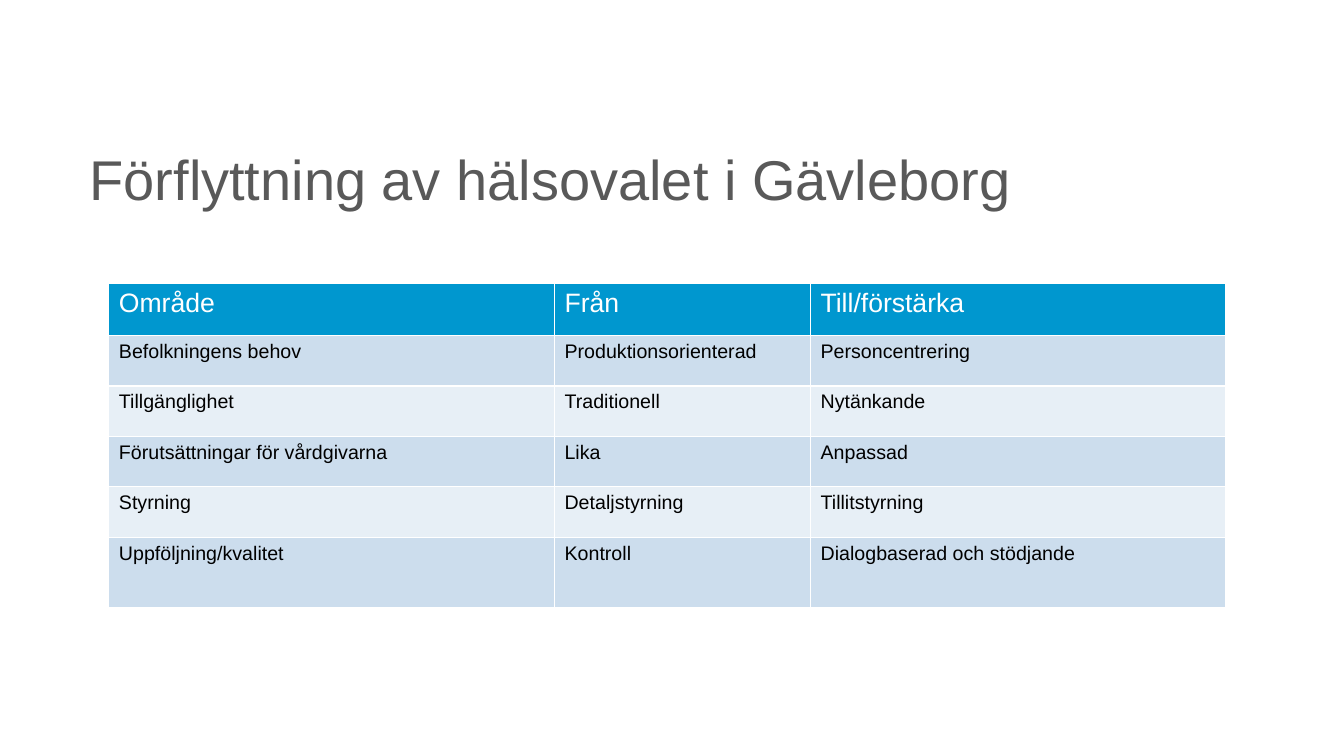
"""Build a slide with a title and a table of shifts in the Gävleborg health choice system."""
import pptx
import pptx.dml.color
import pptx.enum.text
import pptx.oxml
import pptx.oxml.ns
import pptx.util

FONT = "Arial"
WHITE, BLACK, GREY = "FFFFFF", "000000", "595959"
HEADER_FILL = "0097CF"
BAND_FILLS = ("CCDDED", "E7EFF6")
COLUMN_WIDTHS = (4.42, 2.54, 4.12)
ROW_HEIGHTS = (0.52, 0.5, 0.5, 0.5, 0.5, 0.7)
ROWS = (
    ("Område", "Från", "Till/förstärka"),
    ("Befolkningens behov", "Produktionsorienterad", "Personcentrering"),
    ("Tillgänglighet", "Traditionell", "Nytänkande"),
    ("Förutsättningar för vårdgivarna", "Lika", "Anpassad"),
    ("Styrning", "Detaljstyrning", "Tillitstyrning"),
    ("Uppföljning/kvalitet", "Kontroll", "Dialogbaserad och stödjande"),
)


def color(value):
    return pptx.dml.color.RGBColor.from_string(value)


def add_run(paragraph, text, size, text_color):
    run = paragraph.add_run()
    run.text = text
    run.font.name = FONT
    run.font.size = pptx.util.Pt(size)
    run.font.bold = False
    run.font.color.rgb = color(text_color)


def add_title(slide, text, left, top, width, height):
    box = slide.shapes.add_textbox(*map(pptx.util.Inches, (left, top, width, height)))
    frame = box.text_frame
    frame.word_wrap = True
    frame.vertical_anchor = pptx.enum.text.MSO_ANCHOR.BOTTOM
    paragraph = frame.paragraphs[0]
    paragraph.line_spacing = 0.9
    add_run(paragraph, text, 40, GREY)


def set_borders(cell, border_color, width):
    properties = cell._tc.get_or_add_tcPr()
    namespace = pptx.oxml.ns.nsdecls("a")
    for position, side in enumerate(("lnL", "lnR", "lnT", "lnB")):
        border = pptx.oxml.parse_xml(
            f'<a:{side} {namespace} w="{pptx.util.Pt(width)}"><a:solidFill>'
            f'<a:srgbClr val="{border_color}"/></a:solidFill></a:{side}>'
        )
        properties.insert(position, border)


def fill_cell(cell, text, size, text_color, fill_color):
    cell.fill.solid()
    cell.fill.fore_color.rgb = color(fill_color)
    set_borders(cell, WHITE, 1)
    add_run(cell.text_frame.paragraphs[0], text, size, text_color)


def add_shift_table(slide, left, top):
    size = (left, top, sum(COLUMN_WIDTHS), sum(ROW_HEIGHTS))
    frame = slide.shapes.add_table(
        len(ROWS), len(COLUMN_WIDTHS), *map(pptx.util.Inches, size)
    )
    table = frame.table
    for column, width in zip(table.columns, COLUMN_WIDTHS):
        column.width = pptx.util.Inches(width)
    for index, (row, height, texts) in enumerate(zip(table.rows, ROW_HEIGHTS, ROWS)):
        row.height = pptx.util.Inches(height)
        if index == 0:
            style = (19, WHITE, HEADER_FILL)
        else:
            style = (14, BLACK, BAND_FILLS[(index - 1) % 2])
        for cell, text in zip(row.cells, texts):
            fill_cell(cell, text, *style)


def main():
    presentation = pptx.Presentation()
    presentation.slide_width = pptx.util.Inches(13.33)
    presentation.slide_height = pptx.util.Inches(7.5)
    slide = presentation.slides.add_slide(presentation.slide_layouts[6])
    add_title(slide, "Förflyttning av hälsovalet i Gävleborg", 0.79, 0.98, 11.81, 1.18)
    add_shift_table(slide, 1.08, 2.81)
    presentation.save("out.pptx")


if __name__ == "__main__":
    main()
